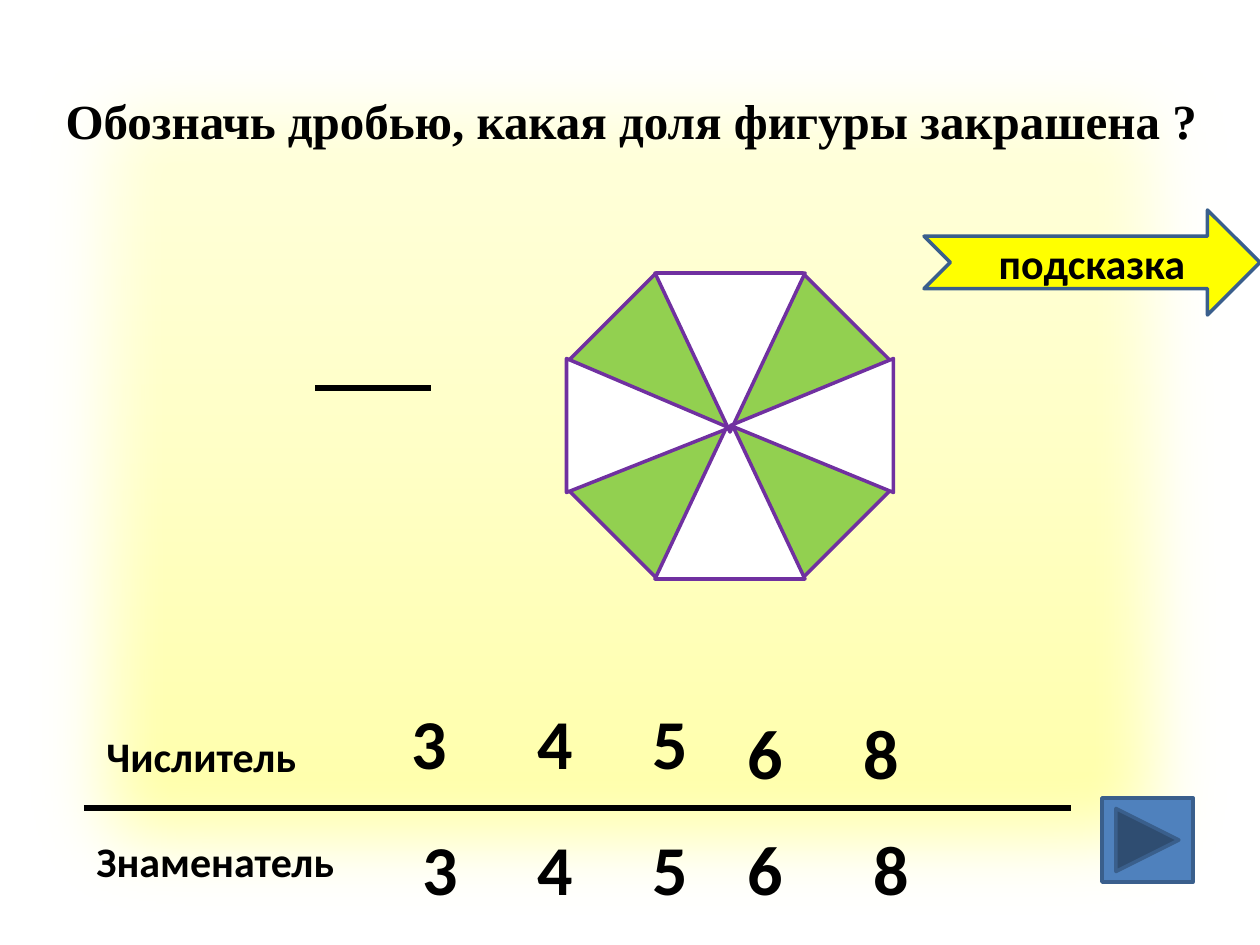
import copy
from dataclasses import dataclass

import pptx
import pptx.dml.color
import pptx.enum.shapes
import pptx.enum.text
import pptx.oxml.ns
import pptx.oxml.xmlchemy
import pptx.util
from lxml import etree

EMU_PER_PX = 914400 / 126
SHAPE = pptx.enum.shapes.MSO_SHAPE
ALIGN = pptx.enum.text.PP_ALIGN
ANCHOR = pptx.enum.text.MSO_ANCHOR
qn = pptx.oxml.ns.qn

BLACK, WHITE, YELLOW, GREEN = "000000", "FFFFFF", "FFFF00", "92D050"
PURPLE, BLUE, DARK_BLUE = "7030A0", "4F81BD", "3A5F8C"


@dataclass(frozen=True)
class Box:
    left: int
    top: int
    width: int
    height: int


@dataclass(frozen=True)
class Sector:
    """A white triangle of the octagon, turned so that its apex meets the centre."""
    box: Box
    rotation: int
    apex: float = 0.5


@dataclass(frozen=True)
class DigitRow:
    lefts: tuple[int, ...]
    tops: tuple[int, ...]


DIGITS = ("3", "4", "5", "6", "8")
DIGIT_ROWS = (
    DigitRow((399, 525, 640, 735, 851), (693, 693, 693, 703, 703)),
    DigitRow((410, 525, 640, 735, 861), (819,) * 5),
)
SECTORS = (
    Sector(Box(655, 420, 150, 159), 0),
    Sector(Box(655, 273, 150, 159), 180),
    Sector(Box(745, 344, 134, 163), 270),
    Sector(Box(581, 344, 134, 163), 90, 0.518),
)


def px(length: int) -> int:
    return round(length * EMU_PER_PX)


def colour(value: str) -> pptx.dml.color.RGBColor:
    return pptx.dml.color.RGBColor.from_string(value)


def place(box: Box) -> tuple[int, int, int, int]:
    return px(box.left), px(box.top), px(box.width), px(box.height)


def write(shape, text: str, size: int, font: str = "Calibri", align=ALIGN.LEFT) -> None:
    shape.text_frame.text = text
    paragraph = shape.text_frame.paragraphs[0]
    paragraph.alignment = align
    run_font = paragraph.runs[0].font
    run_font.name, run_font.size, run_font.bold = font, pptx.util.Pt(size), True
    run_font.color.rgb = colour(BLACK)


def add_label(shapes, box: Box, text: str, size: int) -> None:
    label = shapes.add_textbox(*place(box))
    label.text_frame.word_wrap = True
    write(label, text, size)


def add_figure(shapes, kind, box: Box, fill: str, line: str):
    figure = shapes.add_shape(kind, *place(box))
    figure.shadow.inherit = False
    figure.fill.solid()
    figure.fill.fore_color.rgb = colour(fill)
    figure.line.color.rgb = colour(line)
    figure.line.width = pptx.util.Pt(2)
    return figure


def add_bar(shapes, left: int, right: int, y: int) -> None:
    bar = shapes.add_connector(
        pptx.enum.shapes.MSO_CONNECTOR.STRAIGHT, px(left), px(y), px(right), px(y))
    bar.line.color.rgb = colour(BLACK)
    bar.line.width = pptx.util.Pt(3)
    etree.SubElement(bar.element.spPr, qn("a:effectLst"))


def add_backdrop(shapes) -> None:
    """Pale yellow gradient with soft edges over the whole slide."""
    backdrop = add_figure(shapes, SHAPE.RECTANGLE, Box(0, 0, 1260, 945), YELLOW, DARK_BLUE)
    backdrop.fill.gradient()
    backdrop.fill.gradient_angle = 90
    stop_list = backdrop.element.spPr.find(".//" + qn("a:gsLst"))
    stop_list.insert(1, copy.deepcopy(stop_list[0]))
    stops = zip(backdrop.fill.gradient_stops, (0, 0.5, 1), ("FFFFA0", "FFFFC5", "FFFFE3"))
    for stop, position, value in stops:
        stop.position = position
        stop.color.rgb = colour(value)
    effects = backdrop.element.spPr.find(qn("a:effectLst"))
    etree.SubElement(effects, qn("a:softEdge"), rad="635000")


def add_octagon(shapes) -> None:
    octagon = shapes.add_group_shape().shapes
    add_figure(octagon, SHAPE.OCTAGON, Box(567, 273, 325, 305), GREEN, PURPLE)
    for sector in SECTORS:
        triangle = add_figure(octagon, SHAPE.ISOSCELES_TRIANGLE, sector.box, WHITE, PURPLE)
        triangle.rotation = sector.rotation
        triangle.adjustments[0] = sector.apex


def add_title(slide) -> None:
    title = slide.shapes.title
    title.left, title.top, title.width, title.height = place(Box(53, 84, 1181, 72))
    title.text_frame.word_wrap = False
    title.text_frame.auto_size = pptx.enum.text.MSO_AUTO_SIZE.SHAPE_TO_FIT_TEXT
    title.text_frame.vertical_anchor = ANCHOR.TOP
    write(title, "Обозначь дробью, какая доля фигуры закрашена ?", 28, "Times New Roman")
    title.element.getparent().append(title.element)  # in front of the backdrop


def main() -> None:
    presentation = pptx.Presentation()
    presentation.slide_width, presentation.slide_height = px(1260), px(945)
    slide = presentation.slides.add_slide(presentation.slide_layouts.get_by_name("Title Only"))
    shapes = slide.shapes

    add_backdrop(shapes)
    add_bar(shapes, 315, 431, 388)
    add_label(shapes, Box(94, 724, 273, 63), "Числитель", 24)
    add_label(shapes, Box(84, 829, 368, 63), "Знаменатель", 24)
    add_bar(shapes, 84, 1071, 808)
    for row in DIGIT_ROWS:
        for digit, left, top in zip(DIGITS, row.lefts, row.tops):
            add_label(shapes, Box(left, top, 64, 97), digit, 40)
    add_figure(shapes, SHAPE.ACTION_BUTTON_FORWARD_OR_NEXT,
               Box(1102, 798, 91, 84), BLUE, DARK_BLUE)
    add_octagon(shapes)

    hint = add_figure(shapes, SHAPE.NOTCHED_RIGHT_ARROW,
                      Box(924, 210, 336, 105), YELLOW, DARK_BLUE)
    hint.text_frame.vertical_anchor = ANCHOR.MIDDLE
    write(hint, "подсказка", 24, align=ALIGN.CENTER)
    add_title(slide)
    presentation.save("out.pptx")


if __name__ == "__main__":
    main()
